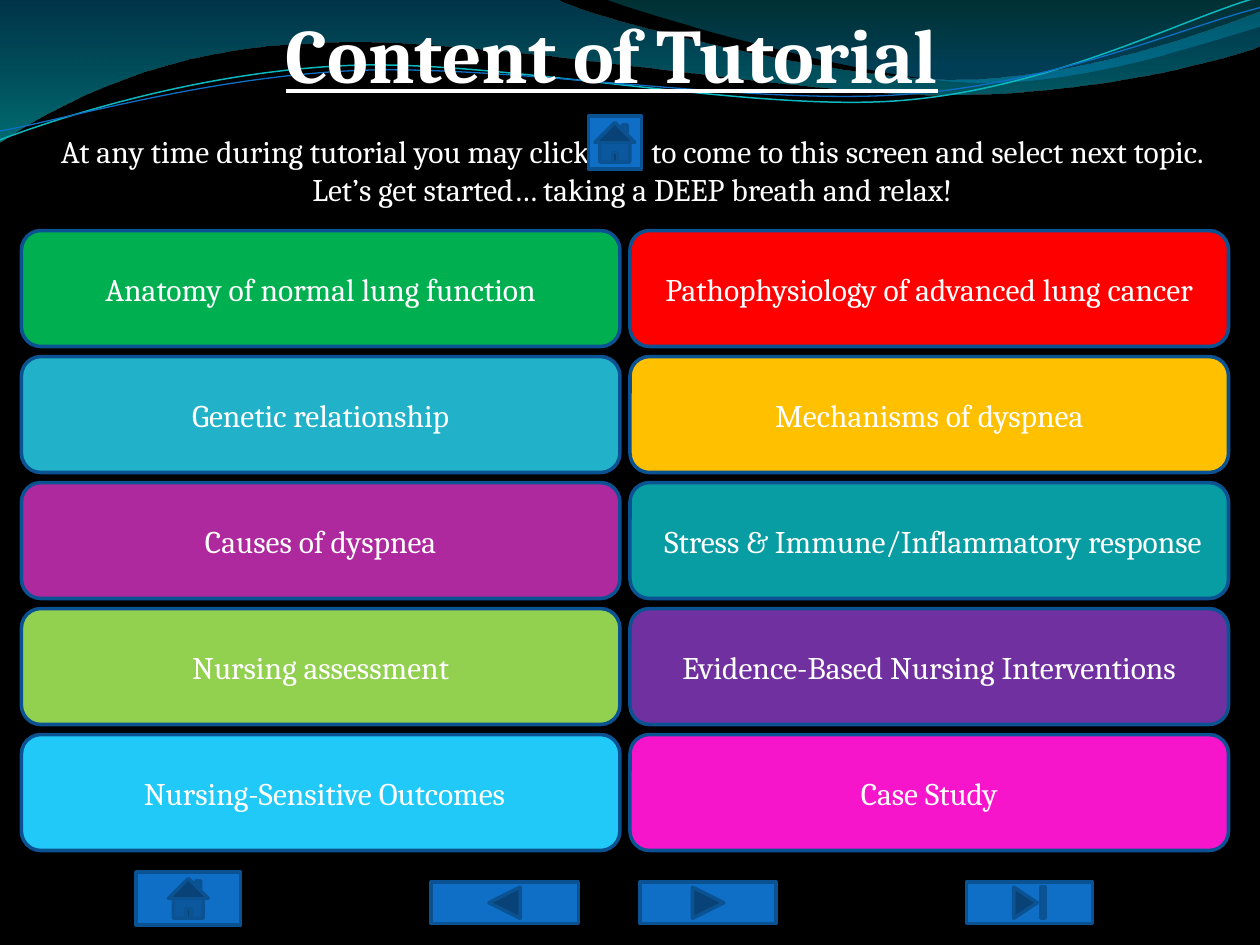
"""Build the tutorial contents slide: a wave header, a grid of topics and navigation buttons."""
from lxml import etree
from pptx import Presentation
from pptx.dml.color import RGBColor
from pptx.enum.shapes import MSO_SHAPE
from pptx.enum.text import MSO_ANCHOR, PP_ALIGN
from pptx.oxml.ns import qn
from pptx.util import Inches, Pt

ROUNDED = MSO_SHAPE.ROUNDED_RECTANGLE
HOME = MSO_SHAPE.ACTION_BUTTON_HOME
BACK = MSO_SHAPE.ACTION_BUTTON_BACK_OR_PREVIOUS
NEXT = MSO_SHAPE.ACTION_BUTTON_FORWARD_OR_NEXT
END = MSO_SHAPE.ACTION_BUTTON_END
CENTER, LEFT = PP_ALIGN.CENTER, PP_ALIGN.LEFT
MIDDLE = MSO_ANCHOR.MIDDLE

FONT = "Cambria"
COLORS = {
    "background": "000000", "text": "FFFFFF", "button": "0F6FC6", "edge": "0B5292",
    "green": "00B050", "red": "FF0000", "turquoise": "21B2C9", "amber": "FFC000",
    "purple": "AE289E", "teal": "089CA3", "lime": "92D050", "violet": "7030A0",
    "sky": "20C9F8", "pink": "F715CC", "cyan line": "0AB8BF", "blue line": "0F6FC6",
    "deep blue": "0074A1", "aqua": "00C6CF", "dark teal": "00A1A9", "ocean": "008BBF",
}

TITLE = "Content of Tutorial"
INTRO = [
    ["At any time during tutorial you may click", " ",
     "to come to this screen and select next topic."],
    ["Let’s get started… taking a DEEP breath and relax!"],
]
ICON_GAP = 31
TOPICS = [
    [("Anatomy of normal lung function", "green", 0),
     ("Pathophysiology of advanced lung cancer", "red", 0)],
    [("Genetic relationship", "turquoise", 0), ("Mechanisms of dyspnea", "amber", 0)],
    [("Causes of dyspnea", "purple", 0),
     ("Stress & Immune/Inflammatory response", "teal", 0.06)],
    [("Nursing assessment", "lime", 0),
     ("Evidence-Based Nursing Interventions", "violet", 0)],
    [("Nursing-Sensitive Outcomes", "sky", 0.06), ("Case Study", "pink", 0)],
]
TEXT_MARGIN = 0.1
GRID_LEFT, GRID_TOP = 0.17, 1.83
COLUMN_STEP, ROW_STEP = 4.83, 1
TOPIC_WIDTH, TOPIC_HEIGHT = 4.75, 0.92

NAVIGATION = [
    (BACK, (3.42, 7, 1.17, 0.33)),
    (NEXT, (5.08, 7, 1.08, 0.33)),
    (END, (7.67, 7, 1, 0.33)),
    (HOME, (1.08, 6.92, 0.83, 0.42)),
]
INTRO_ICON = (4.67, 0.92, 0.42, 0.42)

BANDS = [
    ([(0, 0), (4.4, -0.01), (4.76, 0.17, 6.64, 0.63, 7.58, 0.63),
      (8.53, 0.63, 9.58, 0.26, 10, 0.09), (10.01, 0.36),
      (9.83, 0.44, 8.7, 0.76, 7.46, 0.75), (6.22, 0.75, 3.82, 0.28, 2.57, 0.34),
      (1.29, 0.36, 0.46, 0.83, -0.01, 1.13)],
     [(0, "deep blue", 45), (1, "aqua", 55)]),
    ([(4.79, -0.01), (5.09, 0.11, 6.82, 0.62, 7.69, 0.65),
      (8.56, 0.69, 9.61, 0.32, 10, 0.21), (10, 0)],
     [(0, "dark teal", 30), (0.8, "ocean", 45)]),
]
WAVES = [
    ([(0, 1.11), (0.48, 0.93, 1.58, 0.57, 2.77, 0.52),
      (3.95, 0.47, 5.93, 0.89, 7.13, 0.8), (8.33, 0.71, 9.38, 0.15, 9.98, -0.02)],
     "cyan line", 0.85),
    ([(0, 1.04), (0.47, 0.96, 1.64, 0.61, 2.83, 0.56),
      (4.03, 0.51, 5.97, 0.84, 7.17, 0.75), (8.36, 0.67, 9.41, 0.21, 10, 0.06)],
     "blue line", 0.75),
]


def color(name):
    return RGBColor.from_string(COLORS[name])


def add_outline(page, parts, close):
    """Draw straight segments, then bend those that carry two control points."""
    ends = [(Inches(part[-2]), Inches(part[-1])) for part in parts]
    builder = page.shapes.build_freeform(*ends[0], scale=1.0)
    builder.add_line_segments(ends[1:], close=close)
    outline = builder.convert_to_shape()
    outline.shadow.inherit = False
    segments = list(outline.element.spPr.iter(qn("a:lnTo")))
    for segment, part in zip(segments, parts[1:]):
        if len(part) == 2:
            continue
        curve = etree.Element(qn("a:cubicBezTo"))
        for x, y in zip(part[::2], part[1::2]):
            point = etree.SubElement(curve, qn("a:pt"))
            point.set("x", str(Inches(x) - outline.left))
            point.set("y", str(Inches(y) - outline.top))
        segment.getparent().replace(segment, curve)
    return outline


def add_band(page, parts, stops):
    band = add_outline(page, parts, True)
    band.line.fill.background()
    band.fill.gradient()
    band.fill.gradient_angle = 270
    for stop, (position, name, opacity) in zip(band.fill.gradient_stops, stops):
        stop.position = position
        stop.color.rgb = color(name)
    fills = list(band.element.spPr.iter(qn("a:srgbClr")))
    for fill, (position, name, opacity) in zip(fills, stops):
        etree.SubElement(fill, qn("a:alpha")).set("val", str(opacity * 1000))


def add_wave(page, parts, name, width):
    wave = add_outline(page, parts, False)
    wave.fill.background()
    wave.line.color.rgb = color(name)
    wave.line.width = Pt(width)


def add_button(page, kind, place, fill):
    button = page.shapes.add_shape(kind, *map(Inches, place))
    button.shadow.inherit = False
    button.fill.solid()
    button.fill.fore_color.rgb = color(fill)
    button.line.color.rgb = color("edge")
    button.line.width = Pt(2)
    return button


def format_text(frame, size, align):
    frame.word_wrap = True
    for para in frame.paragraphs:
        para.alignment = align
        for span in para.runs:
            span.font.name = FONT
            span.font.size = Pt(size)
            span.font.color.rgb = color("text")


def add_topics(page):
    for row, topics in enumerate(TOPICS):
        for column, (label, fill, indent) in enumerate(topics):
            place = (GRID_LEFT + column * COLUMN_STEP, GRID_TOP + row * ROW_STEP,
                     TOPIC_WIDTH, TOPIC_HEIGHT)
            frame = add_button(page, ROUNDED, place, fill).text_frame
            frame.text = label
            frame.vertical_anchor = MIDDLE
            frame.margin_left = Inches(TEXT_MARGIN + indent)
            format_text(frame, 18, CENTER)


def add_title(page):
    frame = page.shapes.add_textbox(*map(Inches, (2.17, 0, 5.74, 0.84))).text_frame
    frame.text = TITLE
    format_text(frame, 44, LEFT)
    font = frame.paragraphs[0].runs[0].font
    font.bold = font.underline = True


def add_intro(page):
    frame = page.shapes.add_textbox(*map(Inches, (0.1, 1, 9.84, 0.71))).text_frame
    for index, parts in enumerate(INTRO):
        para = frame.add_paragraph() if index else frame.paragraphs[0]
        for part in parts:
            span = para.add_run()
            span.text = part
            if part == " ":
                span.font._element.set("spc", str(ICON_GAP * 100))
    format_text(frame, 18, CENTER)


def main():
    deck = Presentation()
    deck.slide_width, deck.slide_height = Inches(10), Inches(7.5)
    page = deck.slides.add_slide(deck.slide_layouts[6])
    page.background.fill.solid()
    page.background.fill.fore_color.rgb = color("background")
    for band in BANDS:
        add_band(page, *band)
    for wave in WAVES:
        add_wave(page, *wave)
    for kind, place in NAVIGATION:
        add_button(page, kind, place, "button")
    add_topics(page)
    add_title(page)
    add_intro(page)
    add_button(page, HOME, INTRO_ICON, "button")
    deck.save("out.pptx")


if __name__ == "__main__":
    main()
